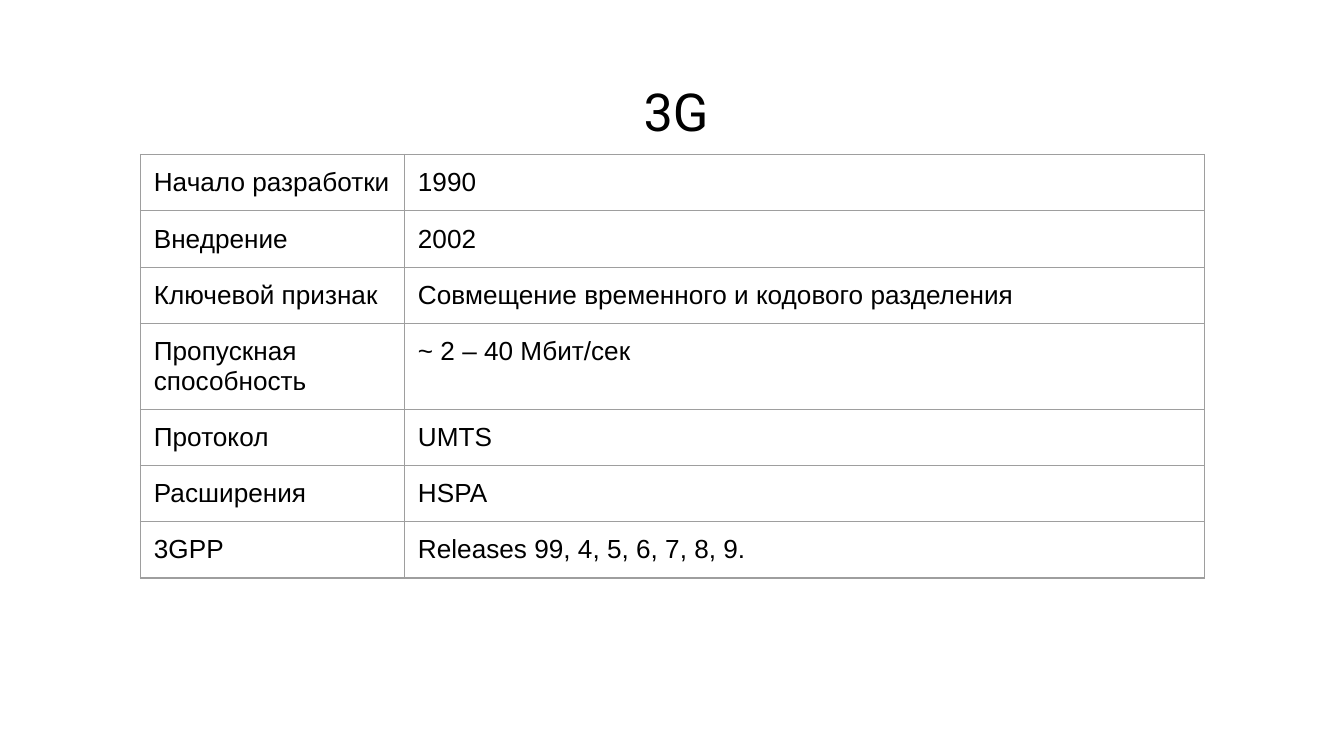
from dataclasses import dataclass

from lxml.etree import SubElement
from pptx import Presentation
from pptx.dml.color import RGBColor as RGB
from pptx.enum.text import MSO_ANCHOR as ANCHOR, PP_ALIGN as ALIGN
from pptx.oxml.ns import qn
from pptx.util import Pt

PX = 4572


@dataclass(frozen=True)
class Theme:
    ink: str = "000000"
    rule: str = "9E9E9E"
    rule_width: float = 0.75
    title_font: str = "Roboto"
    body_font: str = "Arial"
    title_size: int = 28
    body_size: int = 14
    inset: int = 20


def write(tf, text, *, font, size, color, align=ALIGN.LEFT):
    p = tf.paragraphs[0]
    p.alignment = align
    r = p.add_run()
    r.text = text
    r.font.name = font
    r.font.size = Pt(size)
    r.font.color.rgb = RGB.from_string(color)


class SlideBuilder:
    """Holds the theme and the slide being built."""

    def __init__(self, prs, theme):
        self.theme = theme
        self.s = prs.slides.add_slide(prs.slide_layouts[5])

    def inset(self, target):
        for side in ("left", "top", "right", "bottom"):
            setattr(target, f"margin_{side}", self.theme.inset * PX)

    def title(self, text, x, y, w, h):
        t = self.theme
        sp = self.s.shapes.title
        sp.left, sp.top, sp.width, sp.height = (v * PX for v in (x, y, w, h))
        tf = sp.text_frame
        tf.word_wrap = True
        tf.vertical_anchor = ANCHOR.TOP
        self.inset(tf)
        write(tf, text, font=t.title_font, size=t.title_size, color=t.ink, align=ALIGN.CENTER)

    def borders(self, cell):
        tc_pr = cell._tc.get_or_add_tcPr()
        for tag in ("a:lnL", "a:lnR", "a:lnT", "a:lnB"):
            ln = SubElement(tc_pr, qn(tag), w=str(Pt(self.theme.rule_width)))
            fill = SubElement(ln, qn("a:solidFill"))
            SubElement(fill, qn("a:srgbClr"), val=self.theme.rule)

    def table(self, rows, x, y, widths, row_height):
        t = self.theme
        frame = self.s.shapes.add_table(
            len(rows), len(widths), x * PX, y * PX, sum(widths) * PX, len(rows) * row_height * PX
        )
        table = frame.table
        table.first_row = table.horz_banding = False
        for column, width in zip(table.columns, widths):
            column.width = width * PX
        for row, texts in zip(table.rows, rows):
            row.height = row_height * PX
            for cell, text in zip(row.cells, texts):
                self.inset(cell)
                self.borders(cell)
                cell.fill.background()
                write(cell.text_frame, text, font=t.body_font, size=t.body_size, color=t.ink)


ROWS = [
    ("Начало разработки", "1990"),
    ("Внедрение", "2002"),
    ("Ключевой признак", "Совмещение временного и кодового разделения"),
    ("Пропускная способность", "~ 2 – 40 Мбит/сек"),
    ("Протокол", "UMTS"),
    ("Расширения", "HSPA"),
    ("3GPP", "Releases 99, 4, 5, 6, 7, 8, 9."),
]


def main():
    prs = Presentation()
    prs.slide_width, prs.slide_height = 2000 * PX, 1125 * PX
    slide = SlideBuilder(prs, Theme())
    slide.title("3G", 80, 98, 1852, 126)
    slide.table(ROWS, 209, 230, (393, 1190), 83)
    prs.save("out.pptx")


if __name__ == "__main__":
    main()
